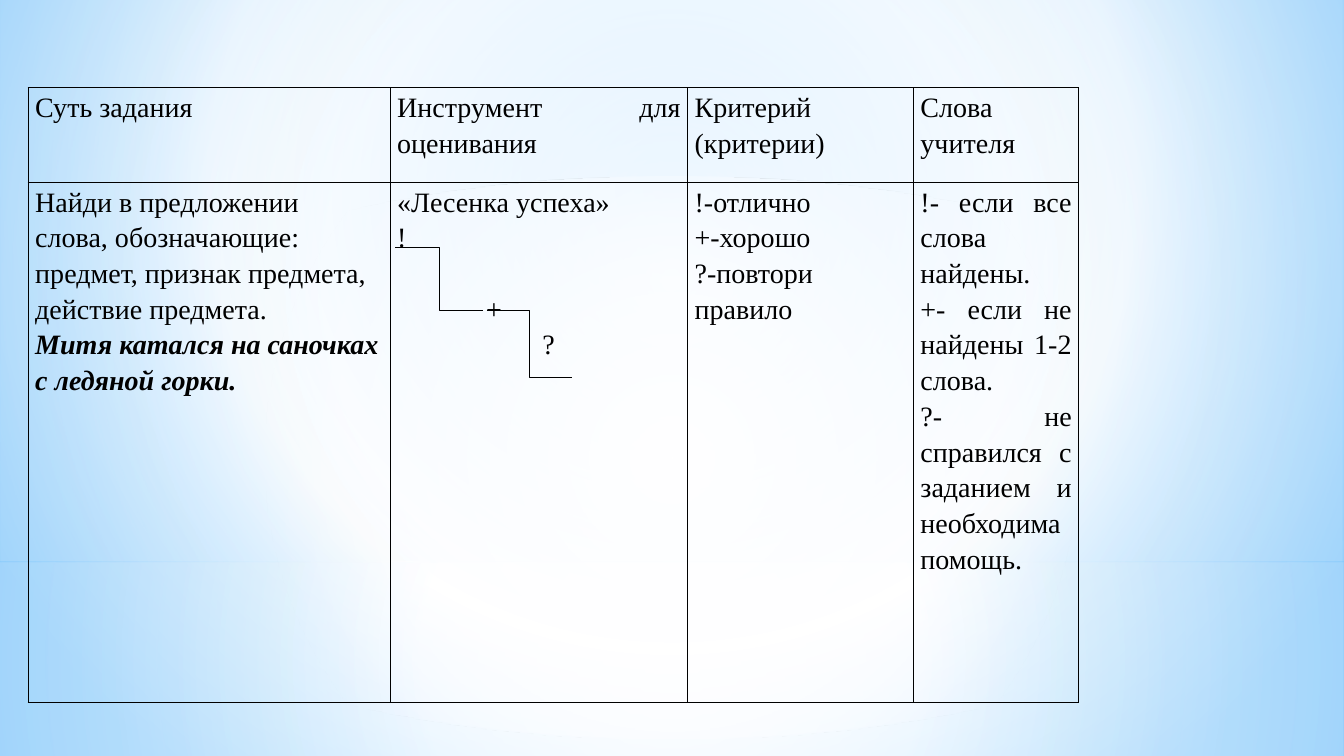
from dataclasses import dataclass

from lxml import etree
from pptx import Presentation
from pptx.dml.color import RGBColor
from pptx.enum.shapes import MSO_CONNECTOR, MSO_SHAPE
from pptx.enum.text import PP_ALIGN
from pptx.oxml.ns import qn
from pptx.util import Inches, Pt

RECT, OVAL = MSO_SHAPE.RECTANGLE, MSO_SHAPE.OVAL
ELBOW = MSO_CONNECTOR.ELBOW
LEFT, JUSTIFY = PP_ALIGN.LEFT, PP_ALIGN.JUSTIFY
SLIDE_W, SLIDE_H = 13.33, 7.5


@dataclass(frozen=True)
class Theme:
    font: str = "Times New Roman"
    size: float = 20
    line_spacing: float = 1.15
    blank_line: float = 25.5
    ink: str = "000000"
    white: str = "FFFFFF"
    haze: str = "B4DCFA"
    sky: str = "9ED5FF"
    deep_sky: str = "5BB9FF"
    border: float = 1
    stair_line: float = 0.75


THEME = Theme()


@dataclass(frozen=True)
class Line:
    """One paragraph of a table cell; tab is (inches, alignment)."""
    text: str
    align: PP_ALIGN = JUSTIFY
    strong: bool = False
    tab: tuple = ()
    before: float = 0


HEADERS = [
    [Line("Суть задания")],
    [Line("Инструмент для оценивания")],
    [Line("Критерий"), Line("(критерии)")],
    [Line("Слова учителя")],
]
TASK = [
    [Line("Найди в предложении"),
     Line("слова, обозначающие: предмет, признак предмета, действие предмета.", LEFT),
     Line("Митя катался на саночках с ледяной горки.", LEFT, strong=True)],
    [Line("«Лесенка успеха»"),
     Line("!", LEFT),
     Line("\t+", LEFT, tab=(0.96, "ctr"), before=THEME.blank_line),
     Line("\t?", LEFT, tab=(1.44, "l"))],
    [Line("!-отлично"), Line("+-хорошо"), Line("?-повтори правило")],
    [Line("!- если все слова найдены."),
     Line("+- если не найдены 1-2 слова."),
     Line("?- не справился с заданием и необходима помощь.")],
]
COLUMNS = [3.59, 2.95, 2.24, 1.64]
ROWS = [0.94, 5.16]


def child(parent, tag, **attributes):
    node = etree.SubElement(parent, qn(tag))
    for key, value in attributes.items():
        node.set(key, str(value))
    return node


def set_gradient(fill, owner, stops, focus=None):
    """Stops are (position, colour, opacity) in percent; without focus it runs downwards."""
    fill.gradient()
    gradient = next(owner.iter(qn("a:gradFill")))
    for old in list(gradient):
        gradient.remove(old)
    stop_list = child(gradient, "a:gsLst")
    for position, colour, opacity in stops:
        stop = child(stop_list, "a:gs", pos=position * 1000)
        tone = child(stop, "a:srgbClr", val=colour)
        if opacity < 100:
            child(tone, "a:alpha", val=opacity * 1000)
    if focus:
        circle = child(gradient, "a:path", path="circle")
        child(circle, "a:fillToRect",
              **{side: share * 1000 for side, share in zip("ltrb", focus)})
    else:
        child(gradient, "a:lin", ang=90 * 60000, scaled=0)


def draw_backdrop(slide, width, height):
    white, haze = THEME.white, THEME.haze
    set_gradient(slide.background.fill, slide.element,
                 [(0, THEME.sky, 100), (60, white, 100), (100, THEME.deep_sky, 100)],
                 (20, 10, 20, 60))
    centre = (50, 50, 50, 50)
    horizon = 0.744
    layers = [
        (RECT, horizon, 1 - horizon, centre,
         [(0, white, 91), (37, white, 76), (100, haze, 79)]),
        (RECT, 0, horizon, centre,
         [(0, white, 89), (48, white, 62), (100, haze, 79)]),
        (RECT, 0.55, 0.333, None,
         [(0, white, 0), (29, white, 30), (45, haze, 40),
          (55, white, 26), (65, haze, 60), (100, white, 0)]),
        (OVAL, 0.233, horizon, centre, [(0, white, 100), (56, white, 0)]),
    ]
    for kind, top, share, focus, stops in layers:
        layer = slide.shapes.add_shape(kind, 0, Inches(top * height),
                                       Inches(width), Inches(share * height))
        layer.shadow.inherit = False
        layer.line.fill.background()
        set_gradient(layer.fill, layer.element, stops, focus)


def write_line(paragraph, line):
    paragraph.text = line.text
    paragraph.alignment = line.align
    paragraph.line_spacing = THEME.line_spacing
    if line.before:
        paragraph.space_before = Pt(line.before)
    if line.tab:
        position, alignment = line.tab
        tabs = child(paragraph.runs[0].font._element.getparent().getparent().pPr, "a:tabLst")
        child(tabs, "a:tab", pos=Inches(position), algn=alignment)
    for run in paragraph.runs:
        run.font.name = THEME.font
        run.font.size = Pt(THEME.size)
        run.font.color.rgb = RGBColor.from_string(THEME.ink)
        run.font.bold = run.font.italic = line.strong


def add_borders(cell):
    properties = cell._tc.get_or_add_tcPr()
    for index, side in enumerate(("a:lnL", "a:lnR", "a:lnT", "a:lnB")):
        edge = child(properties, side, w=Pt(THEME.border))
        child(child(edge, "a:solidFill"), "a:srgbClr", val=THEME.ink)
        properties.insert(index, edge)


def fill_cell(cell, lines):
    cell.margin_left = cell.margin_right = Inches(0.07)
    cell.margin_top = cell.margin_bottom = 0
    cell.fill.background()
    add_borders(cell)
    frame = cell.text_frame
    frame.text = "\n".join(line.text for line in lines)
    for paragraph, line in zip(frame.paragraphs, lines):
        write_line(paragraph, line)


def draw_task_table(slide, left, top):
    table = slide.shapes.add_table(
        len(ROWS), len(COLUMNS), Inches(left), Inches(top),
        Inches(sum(COLUMNS)), Inches(sum(ROWS))).table
    table.first_row = table.horz_banding = False
    for column, width in zip(table.columns, COLUMNS):
        column.width = Inches(width)
    for row, height, contents in zip(table.rows, ROWS, (HEADERS, TASK)):
        row.height = Inches(height)
        for cell, lines in zip(row.cells, contents):
            fill_cell(cell, lines)


def draw_success_stairs(slide, left, top):
    """Two steps leading down; left and top are the cell's corner."""
    steps = [(0.05, 0.65, 0.87, 0.62), (0.96, 1.27, 0.84, 0.67)]
    for x, y, width, height in steps:
        step = slide.shapes.add_connector(
            ELBOW, Inches(left + x), Inches(top + y),
            Inches(left + x + width), Inches(top + y + height))
        step.line.color.rgb = RGBColor.from_string(THEME.ink)
        step.line.width = Pt(THEME.stair_line)
        child(step.element.spPr, "a:effectLst")


def main():
    presentation = Presentation()
    presentation.slide_width = Inches(SLIDE_W)
    presentation.slide_height = Inches(SLIDE_H)
    slide = presentation.slides.add_slide(presentation.slide_layouts[6])
    table_left, table_top = 0.021 * SLIDE_W, 0.116 * SLIDE_H
    draw_backdrop(slide, SLIDE_W, SLIDE_H)
    draw_task_table(slide, table_left, table_top)
    draw_success_stairs(slide, table_left + COLUMNS[0], table_top + ROWS[0])
    presentation.save("out.pptx")


if __name__ == "__main__":
    main()
